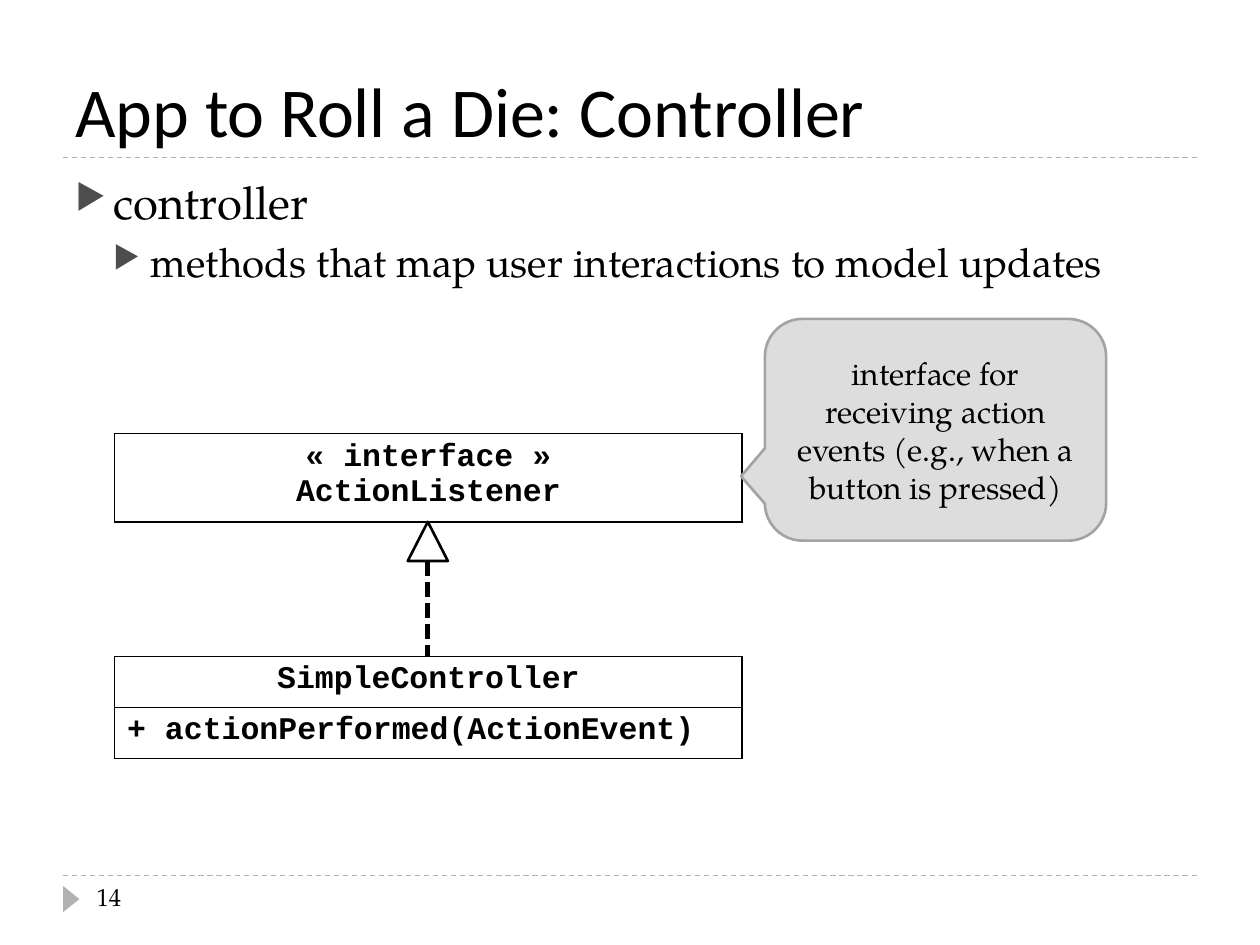
"""Build a slide on the controller of a die-rolling app."""
from lxml.etree import SubElement as Sub
from pptx import Presentation
from pptx.dml.color import RGBColor as RGB
from pptx.enum.dml import MSO_LINE as Dash
from pptx.enum.shapes import MSO_CONNECTOR as Link, MSO_SHAPE as Kind
from pptx.enum.text import MSO_ANCHOR as Anchor, PP_ALIGN as Align
from pptx.oxml.ns import qn
from pptx.util import Cm, Pt

HUE = {"ink": "000000", "paper": "FFFFFF", "rule": "B2B2B2",
       "mark": "4D4D4D", "note": "DDDDDD", "edge": "A3A3A3"}
SERIF, SANS, MONO = "TeX Gyre Pagella", "Calibri", "Courier New"


def write(frame, lines, font, size, align=Align.LEFT, bold=False):
    frame.word_wrap = True
    for i, line in enumerate(lines):
        para = frame.paragraphs[0] if i == 0 else frame.add_paragraph()
        para.alignment = align
        run = para.add_run()
        run.text = line
        run.font.name, run.font.size, run.font.bold = font, Pt(size), bold
        run.font.color.rgb = RGB.from_string(HUE["ink"])


def rule(x1, y1, x2, y2, hue, width, dash):
    line = shapes.add_connector(Link.STRAIGHT, Cm(x1), Cm(y1), Cm(x2), Cm(y2))
    line.line.color.rgb = RGB.from_string(HUE[hue])
    line.line.width, line.line.dash_style = Pt(width), dash
    Sub(line._element.spPr, qn("a:effectLst"))


deck = Presentation()
deck.slide_width, deck.slide_height = Cm(25.4), Cm(19.05)
shapes = deck.slides.add_slide(deck.slide_layouts[6]).shapes

for y in (17.65, 3.18):
    rule(1.27, y, 24.13, y, "rule", 0.75, Dash.DASH)

title = shapes.add_textbox(Cm(1.27), Cm(0.43), Cm(22.86), Cm(2.75)).text_frame
title.vertical_anchor = Anchor.BOTTOM
write(title, ["App to Roll a Die: Controller"], SANS, 40)

page = shapes.add_textbox(Cm(1.7), Cm(17.65), Cm(5.5), Cm(1)).text_frame
write(page, ["14"], SERIF, 14)

body = shapes.add_textbox(Cm(1.27), Cm(3.38), Cm(22.86), Cm(13.7)).text_frame
write(body, ["controller", "methods that map user interactions to model updates"],
      SERIF, 26)
for level, (para, size, gap) in enumerate(zip(body.paragraphs, (26, 23), (6, 5))):
    para.level, para.space_before = level, Pt(gap)
    para.runs[0].font.size = Pt(size)
    props = para._p.get_or_add_pPr()
    props.set("marL", str(Cm(0.76 * (level + 1))))
    props.set("indent", str(Cm(-0.76)))
    Sub(Sub(props, qn("a:buClr")), qn("a:srgbClr"), val=HUE["mark"])
    Sub(props, qn("a:buSzPct"), val="76000")
    Sub(props, qn("a:buChar"), char="▶")

boxes = [
    (13.23, 1.03, [(["SimpleController"], Align.CENTER),
                   (["+ actionPerformed(ActionEvent)"], Align.LEFT)]),
    (8.74, 1.78, [(["« interface »", "ActionListener"], Align.CENTER)]),
]
for top, high, rows in boxes:
    table = shapes.add_table(len(rows), 1, Cm(2.31), Cm(top), Cm(12.65),
                             Cm(high * len(rows))).table
    table.first_row = table.horz_banding = False
    for i, (lines, align) in enumerate(rows):
        cell = table.cell(i, 0)
        props = cell._tc.get_or_add_tcPr()
        for side in ("lnL", "lnR", "lnT", "lnB"):
            edge = Sub(props, qn("a:" + side), w=str(Pt(1)))
            Sub(Sub(edge, qn("a:solidFill")), qn("a:srgbClr"), val=HUE["ink"])
        cell.fill.solid()
        cell.fill.fore_color.rgb = RGB.from_string(HUE["paper"])
        write(cell.text_frame, lines, MONO, 18, align, True)

rule(8.62, 11.3, 8.62, 13.23, "ink", 3, Dash.SQUARE_DOT)

forms = [
    (Kind.ISOSCELES_TRIANGLE, 1.17, 17.96, 0.53, 0.33, 90, [0.5], "rule", None, ""),
    (Kind.ISOSCELES_TRIANGLE, 8.22, 10.52, 0.81, 0.79, 0, [0.5], "paper", "ink", ""),
    (Kind.ROUNDED_RECTANGULAR_CALLOUT, 15.42, 6.43, 6.88, 4.47, 0,
     [-0.57, 0.21, 0.17], "note", "edge",
     "interface for receiving action events (e.g., when a button is pressed)"),
]
for kind, x, y, wide, high, turn, bends, fill, edge, text in forms:
    form = shapes.add_shape(kind, Cm(x), Cm(y), Cm(wide), Cm(high))
    form.shadow.inherit = False
    form.rotation = turn
    for i, bend in enumerate(bends):
        form.adjustments[i] = bend
    form.fill.solid()
    form.fill.fore_color.rgb = RGB.from_string(HUE[fill])
    if edge:
        form.line.color.rgb = RGB.from_string(HUE[edge])
        form.line.width = Pt(1.5)
    else:
        form.line.fill.background()
    if text:
        form.text_frame.vertical_anchor = Anchor.MIDDLE
        write(form.text_frame, [text], SERIF, 18, Align.CENTER)

deck.save("out.pptx")
